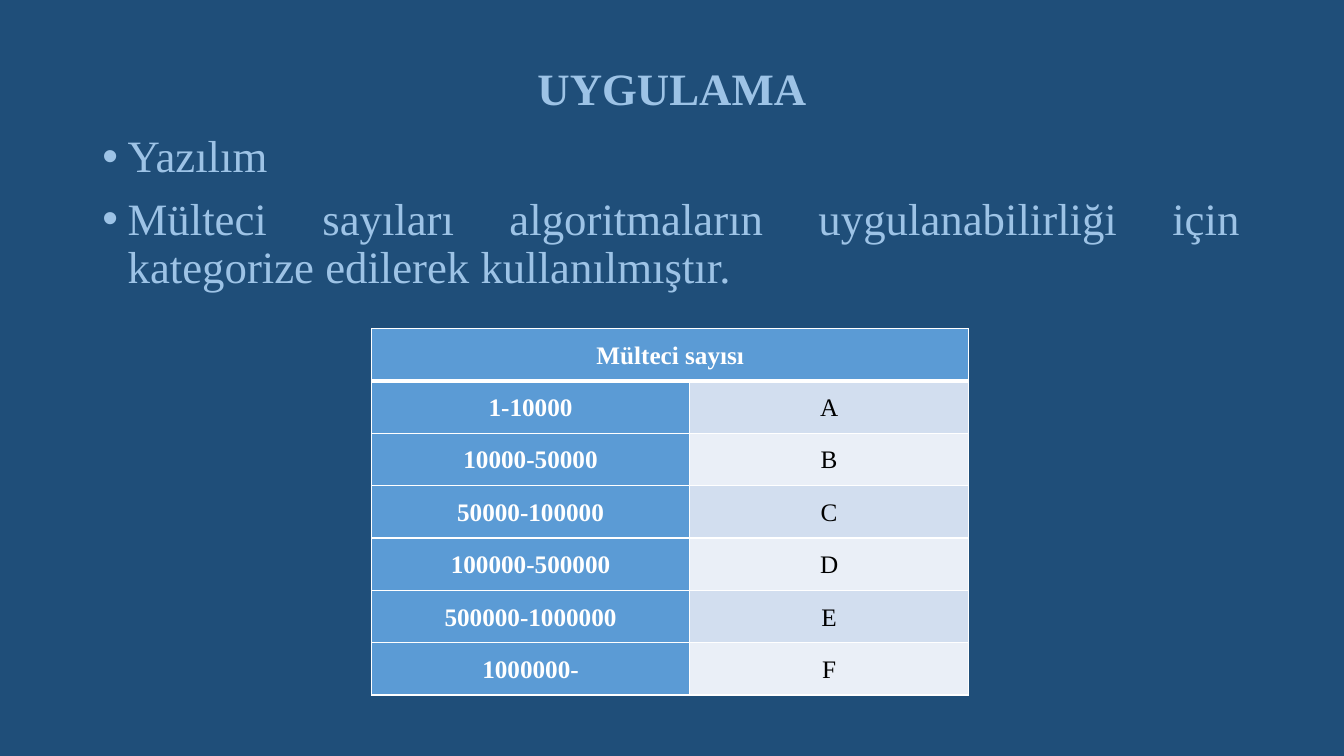
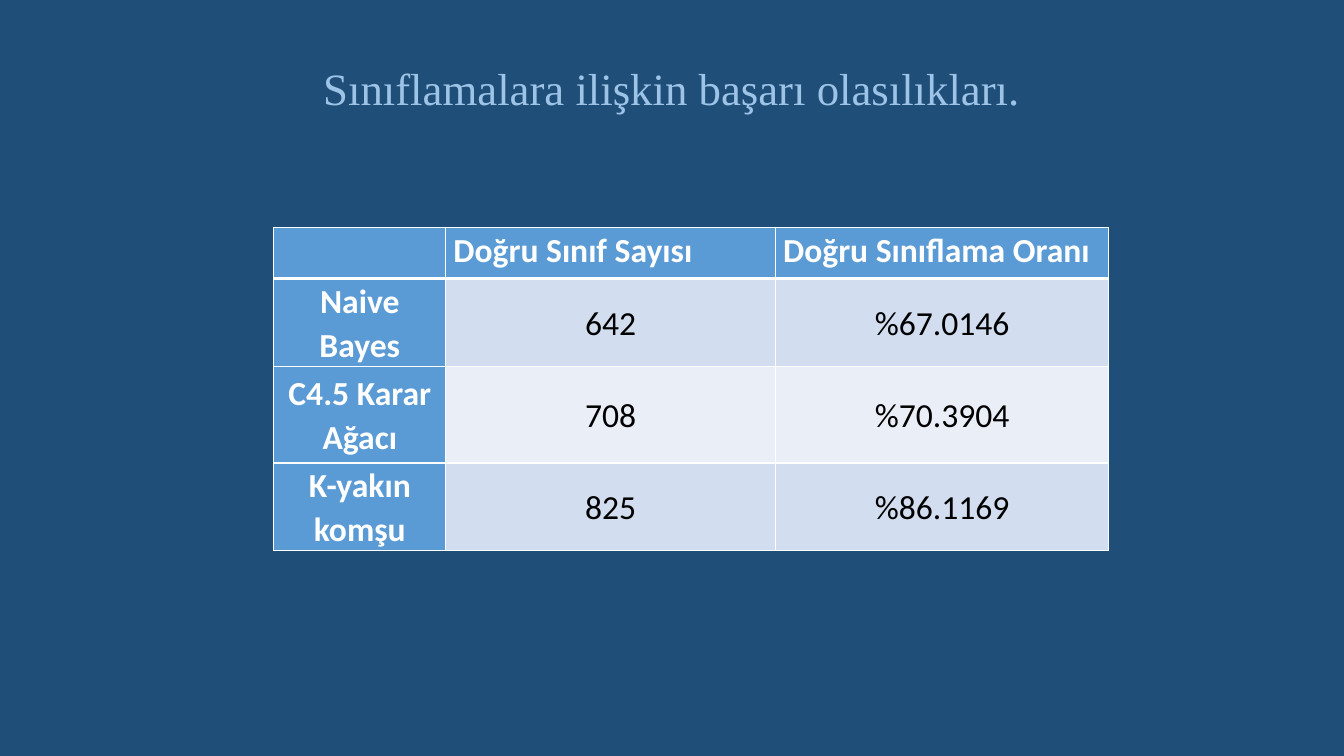
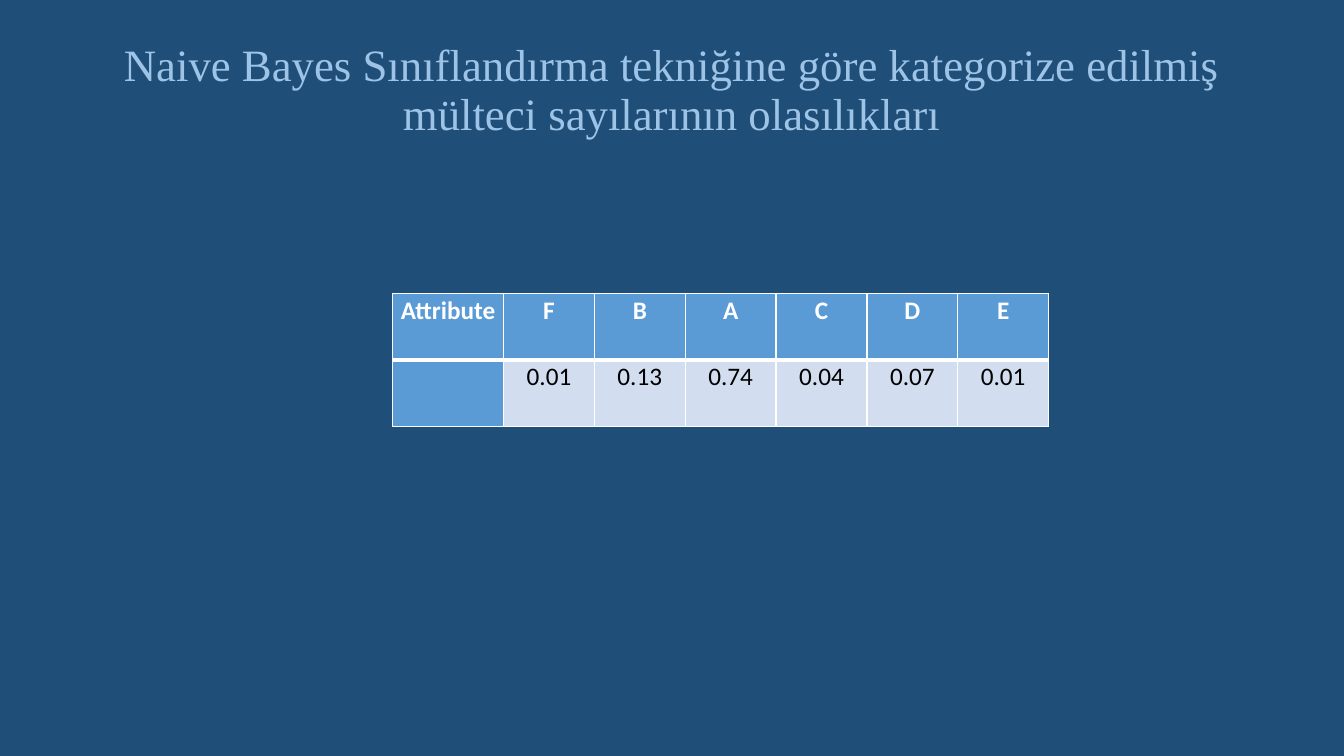
from dataclasses import dataclass

from lxml import etree
from pptx import Presentation
from pptx.dml.color import RGBColor
from pptx.enum.text import MSO_ANCHOR, PP_ALIGN
from pptx.oxml.ns import qn
from pptx.util import Pt

LEFT, CENTER, FULL = PP_ALIGN.LEFT, PP_ALIGN.CENTER, PP_ALIGN.JUSTIFY
TOP, MIDDLE = MSO_ANCHOR.TOP, MSO_ANCHOR.MIDDLE

COLORS = {
    "back": "1F4E79",
    "text": "9DC3E6",
    "head": "5B9BD5",
    "odd": "D2DEEF",
    "even": "EAEFF7",
    "white": "FFFFFF",
    "black": "000000",
}
SERIF, SANS = "Times New Roman", "Calibri"
WIDTH, HEIGHT = 960, 540
TITLE_BOX = (66, 13, 828, 104.4)
BODY_BOX = (66, 92.2, 828, 393.8)
LIST_SIZE, INDENT = 32, 18
THIN, THICK = 1, 3
BODY_LAYOUT, TITLE_LAYOUT = 1, 5


@dataclass
class Grid:
    """Table with a header row and a header column."""
    left: float
    top: float
    cols: list[float]
    rows: list[float]
    cells: list[tuple[str, ...]]
    font: str
    size: int
    head_align: PP_ALIGN = CENTER
    head_anchor: MSO_ANCHOR = MIDDLE
    anchor: MSO_ANCHOR = MIDDLE
    span: bool = False


@dataclass
class Page:
    title: str
    grid: Grid
    bold: bool = False
    items: tuple[str, ...] = ()


PAGES = [
    Page(
        "UYGULAMA",
        Grid(265.5, 234.7, [227, 199.5], [37.4] * 7,
             [("Mülteci sayısı", ""),
              ("1-10000", "A"),
              ("10000-50000", "B"),
              ("50000-100000", "C"),
              ("100000-500000", "D"),
              ("500000-1000000", "E"),
              ("1000000-", "F")],
             SERIF, 18, span=True),
        bold=True,
        items=("Yazılım",
               "Mülteci sayıları algoritmaların uygulanabilirliği için "
               "kategorize edilerek kullanılmıştır."),
    ),
    Page(
        "Sınıflamalara ilişkin başarı olasılıkları.",
        Grid(195.5, 162.3, [123, 235.5, 238], [36.7, 36.7, 69.1, 54.7],
             [("", "Doğru Sınıf Sayısı", "Doğru Sınıflama Oranı"),
              ("Naive Bayes", "642", "%67.0146"),
              ("C4.5 Karar Ağacı", "708", "%70.3904"),
              ("K-yakın komşu", "825", "%86.1169")],
             SANS, 24, head_align=LEFT, head_anchor=TOP),
    ),
    Page(
        "Naive Bayes Sınıflandırma tekniğine göre kategorize edilmiş "
        "mülteci sayılarının olasılıkları",
        Grid(280.5, 209.5, [79.2] + [64.9] * 6, [47.5] * 2,
             [("Attribute", "F", "B", "A", "C", "D", "E"),
              ("", "0.01", "0.13", "0.74", "0.04", "0.07", "0.01")],
             SANS, 18, head_anchor=TOP, anchor=TOP),
    ),
]


def rgb(name: str) -> RGBColor:
    return RGBColor.from_string(COLORS[name])


def write(para, text: str, *, font: str, size: float, color: str,
          bold: bool = False, align=CENTER, line: float = 0.9,
          before: float = 0) -> None:
    para.alignment = align
    para.line_spacing = line
    para.space_before = Pt(before)
    run = para.add_run()
    run.text = text
    run.font.name = font
    run.font.size = Pt(size)
    run.font.bold = bold
    run.font.color.rgb = rgb(color)


def place(shape, box: tuple[float, ...]) -> None:
    shape.left, shape.top, shape.width, shape.height = map(Pt, box)


def bullet(para) -> None:
    props = para._p.get_or_add_pPr()
    props.set("marL", str(Pt(INDENT)))
    props.set("indent", str(-Pt(INDENT)))
    etree.SubElement(props, qn("a:buChar")).set("char", "•")


def edge(cell, side: str, width: float) -> None:
    line = etree.SubElement(cell._tc.get_or_add_tcPr(), qn(f"a:ln{side}"))
    line.set("w", str(Pt(width)))
    fill = etree.SubElement(line, qn("a:solidFill"))
    etree.SubElement(fill, qn("a:srgbClr")).set("val", COLORS["white"])


def add_title(slide, page: Page) -> None:
    shape = slide.shapes.title
    place(shape, TITLE_BOX)
    frame = shape.text_frame
    frame.vertical_anchor = MIDDLE
    write(frame.paragraphs[0], page.title, font=SERIF, size=LIST_SIZE,
          color="text", bold=page.bold)


def add_list(slide, items: tuple[str, ...]) -> None:
    shape = slide.placeholders[1]
    place(shape, BODY_BOX)
    frame = shape.text_frame
    for i, item in enumerate(items):
        para = frame.add_paragraph() if i else frame.paragraphs[0]
        write(para, item, font=SERIF, size=LIST_SIZE, color="text",
              align=FULL, before=10)
        bullet(para)


def add_cell(cell, text: str, row: int, col: int, grid: Grid) -> None:
    head = row == 0
    label = head or col == 0
    cell.margin_left = cell.margin_right = Pt(5.4)
    cell.margin_top = cell.margin_bottom = Pt(0)
    cell.vertical_anchor = grid.head_anchor if head else grid.anchor
    # The rule under the header belongs to both rows it divides
    widths = {"L": THIN, "R": THIN,
              "T": THICK if row == 1 else THIN,
              "B": THICK if head else THIN}
    for side, width in widths.items():
        edge(cell, side, width)
    cell.fill.solid()
    band = "odd" if row % 2 else "even"
    cell.fill.fore_color.rgb = rgb("head" if label else band)
    if text:
        write(cell.text_frame.paragraphs[0], text, font=grid.font,
              size=grid.size, color="white" if label else "black",
              bold=label, align=grid.head_align if head else CENTER,
              line=1.07)


def add_grid(slide, grid: Grid) -> None:
    box = (grid.left, grid.top, sum(grid.cols), sum(grid.rows))
    table = slide.shapes.add_table(
        len(grid.rows), len(grid.cols), *map(Pt, box)).table
    table.first_col = True
    for col, width in zip(table.columns, grid.cols):
        col.width = Pt(width)
    for row, height in zip(table.rows, grid.rows):
        row.height = Pt(height)
    for r, texts in enumerate(grid.cells):
        for c, text in enumerate(texts):
            add_cell(table.cell(r, c), text, r, c, grid)
    if grid.span:
        table.cell(0, 0).merge(table.cell(0, len(grid.cols) - 1))


def main() -> None:
    deck = Presentation()
    deck.slide_width, deck.slide_height = Pt(WIDTH), Pt(HEIGHT)

    # Shared background
    back = deck.slide_master.background.fill
    back.solid()
    back.fore_color.rgb = rgb("back")

    for page in PAGES:
        kind = BODY_LAYOUT if page.items else TITLE_LAYOUT
        slide = deck.slides.add_slide(deck.slide_layouts[kind])
        add_title(slide, page)
        if page.items:
            add_list(slide, page.items)
        add_grid(slide, page.grid)
    deck.save("out.pptx")


if __name__ == "__main__":
    main()
